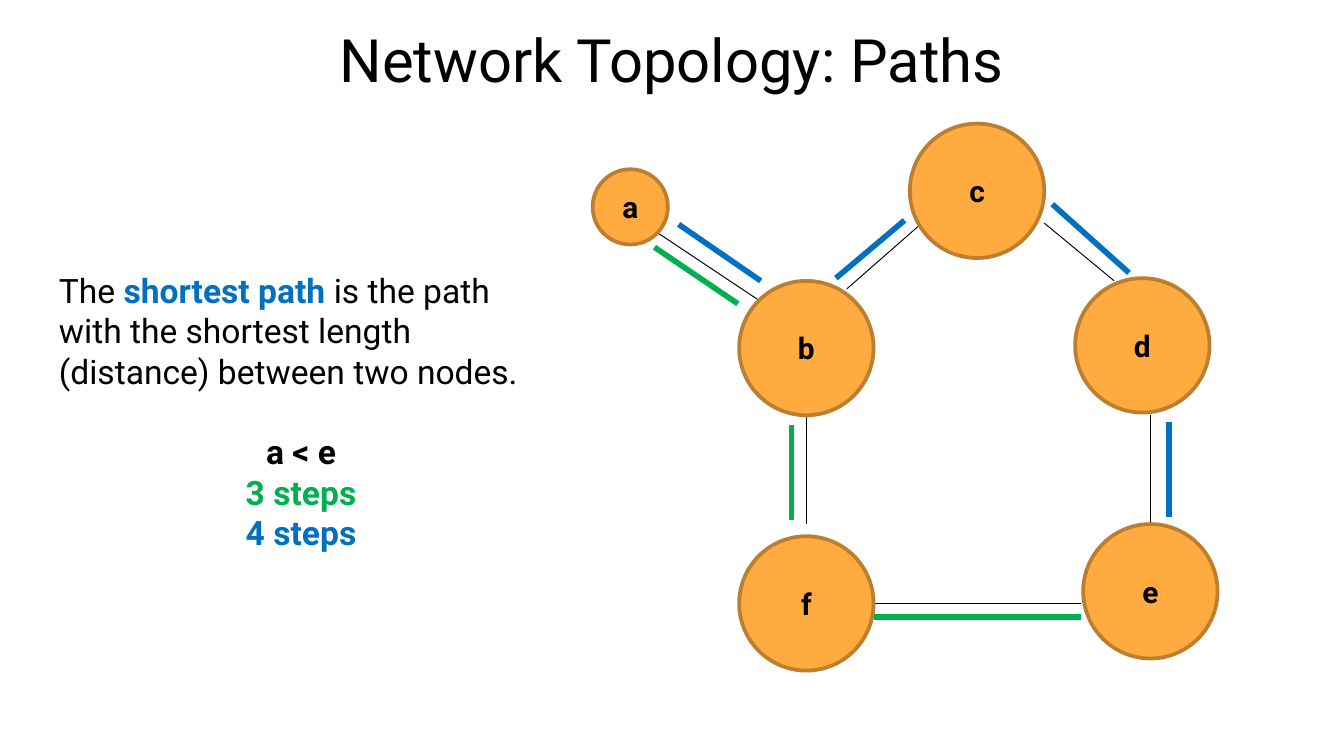
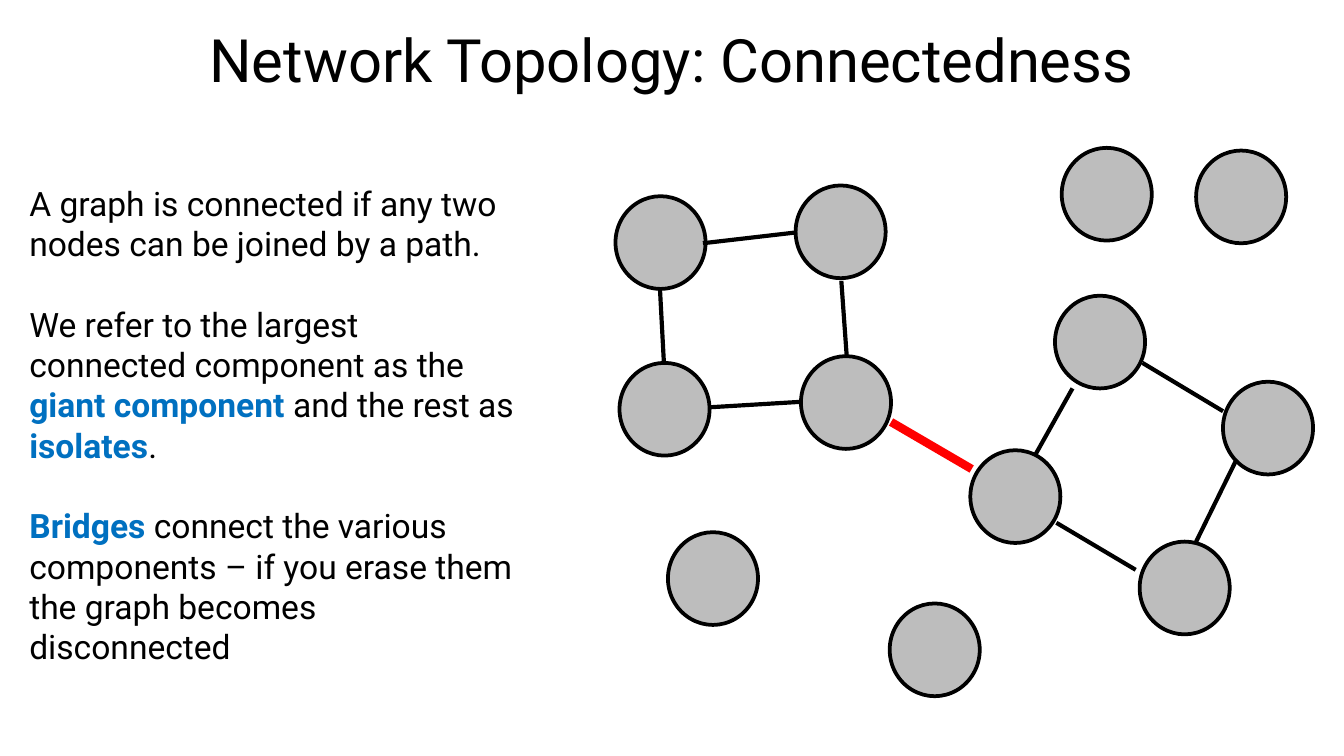
"""Build two slides on network topology: paths and connectedness."""
from lxml import etree
from pptx import Presentation
from pptx import util as u
from pptx.dml.color import RGBColor
from pptx.enum import shapes, text
from pptx.oxml.ns import qn

PX = u.Inches(1) // 100
BLACK, BLUE, GREEN, RED = "000000", "0070C0", "00B050", "FF0000"
ORANGE, BROWN, GREY = "FFAB40", "BD7F2F", "BDBDBD"
LEFT, CENTER = text.PP_ALIGN.LEFT, text.PP_ALIGN.CENTER
BLANK_LINE = 21.6


def px(*lengths):
    return [u.Emu(length * PX) for length in lengths]


def paint(target, color):
    if hasattr(target, "solid"):
        target.solid()
        target = target.fore_color
    target.rgb = RGBColor.from_string(color)


class Pages:
    def __init__(self):
        self.deck = Presentation()
        self.deck.slide_width = px(1000)[0]
        self.deck.slide_height = u.Emu(self.deck.slide_width * 9 // 16)
        self.page = None

    def style(self, para, size, color=BLACK, bold=False, align=LEFT):
        para.alignment = align
        font = para.font
        font.name, font.size, font.bold = "Roboto", u.Pt(size), bold
        paint(font.color, color)

    def start(self, title):
        self.page = self.deck.slides.add_slide(self.deck.slide_layouts[5])
        box = self.page.shapes.title
        box.left, box.top, box.width, box.height = px(34, 7, 932, 65)
        frame = box.text_frame
        frame.margin_left = frame.margin_right = px(10)[0]
        frame.margin_top = frame.margin_bottom = px(10)[0]
        frame.vertical_anchor = text.MSO_ANCHOR.TOP
        frame.auto_size = text.MSO_AUTO_SIZE.NONE
        frame.text = title
        self.style(frame.paragraphs[0], 32, align=CENTER)

    def body(self, place, paragraphs):
        frame = self.page.shapes.add_textbox(*px(*place)).text_frame
        frame.word_wrap = True
        frame.auto_size = text.MSO_AUTO_SIZE.SHAPE_TO_FIT_TEXT
        for index, (spans, look, space) in enumerate(paragraphs):
            para = frame.add_paragraph() if index else frame.paragraphs[0]
            self.style(para, 18, **look)
            para.space_before = u.Pt(space)
            for words, accent in spans:
                span = para.add_run()
                span.text = words
                if accent:
                    span.font.bold = True
                    paint(span.font.color, accent)

    def node(self, place, fill, outline, label=""):
        circle = self.page.shapes.add_shape(shapes.MSO_SHAPE.OVAL, *px(*place))
        circle.shadow.inherit = False
        paint(circle.fill, fill)
        paint(circle.line.fill, outline)
        circle.line.width = u.Pt(2)
        if label:
            frame = circle.text_frame
            frame.vertical_anchor = text.MSO_ANCHOR.MIDDLE
            frame.text = label
            self.style(frame.paragraphs[0], 16, bold=True, align=CENTER)

    def edges(self, ends, color, width):
        for points in ends:
            edge = self.page.shapes.add_connector(
                shapes.MSO_CONNECTOR.STRAIGHT, *px(*points))
            paint(edge.line.fill, color)
            edge.line.width = u.Pt(width)
            etree.SubElement(edge._element.spPr, qn("a:effectLst"))


def paths(pages):
    pages.start("Network Topology: Paths")
    pages.body((34, 196, 380, 252), [
        ([("The ", None), ("shortest path ", BLUE),
          ("is the path with the shortest length (distance) between two nodes.", None)], {}, 0),
        ([("a < e", None)], {"bold": True, "align": CENTER}, BLANK_LINE),
        ([("3 steps", None)], {"color": GREEN, "bold": True, "align": CENTER}, 0),
        ([("4 steps", None)], {"color": BLUE, "bold": True, "align": CENTER}, 0),
    ])
    pages.edges([(630, 215, 686, 166), (489, 173, 564, 223), (856, 309, 856, 389),
                 (600, 310, 600, 390), (804, 449, 650, 449), (777, 166, 829, 209)], BLACK, 0.5)
    for label, left, top, size in [("a", 441, 126, 56), ("b", 550, 209, 100),
                                   ("c", 677, 92, 100), ("d", 800, 207, 100),
                                   ("e", 806, 390, 100), ("f", 550, 399, 100)]:
        pages.node((left, top, size, size), ORANGE, BROWN, label)
    pages.edges([(549, 226, 487, 184), (804, 459, 650, 459), (589, 387, 589, 316)], GREEN, 3)
    pages.edges([(870, 385, 870, 314), (840, 203, 783, 152),
                 (622, 207, 673, 164), (505, 167, 566, 209)], BLUE, 3)


def connectedness(pages):
    pages.start("Network Topology: Connectedness")
    pages.body((12, 131, 384, 374), [
        ([("A graph is connected if any two nodes can be joined by a path.", None)], {}, 0),
        ([("We refer to the largest connected component as the ", None),
          ("giant component ", BLUE), ("and the rest as ", None),
          ("isolates", BLUE), (".", None)], {}, BLANK_LINE),
        ([("Bridges", BLUE),
          (" connect the various components – if you erase them"
           " the graph becomes disconnected", None)], {}, BLANK_LINE),
    ])
    square = [(458, 146), (461, 270), (596, 265), (592, 138)]
    diamond = [(848, 403), (910, 284), (785, 220), (722, 335)]
    isolates = [(497, 396), (662, 449), (790, 110), (890, 112)]
    for left, top in square + diamond + isolates:
        pages.node((left, top, 67, 69), GREY, BLACK)
    pages.edges([(850, 270, 910, 306), (786, 389, 845, 424), (920, 342, 890, 403),
                 (798, 289, 770, 339), (523, 181, 592, 173), (529, 303, 596, 299),
                 (626, 209, 630, 265), (491, 214, 494, 270)], BLACK, 2.25)
    pages.edges([(663, 314, 723, 349)], RED, 4.5)


def main():
    pages = Pages()
    paths(pages)
    connectedness(pages)
    pages.deck.save("out.pptx")


if __name__ == "__main__":
    main()
